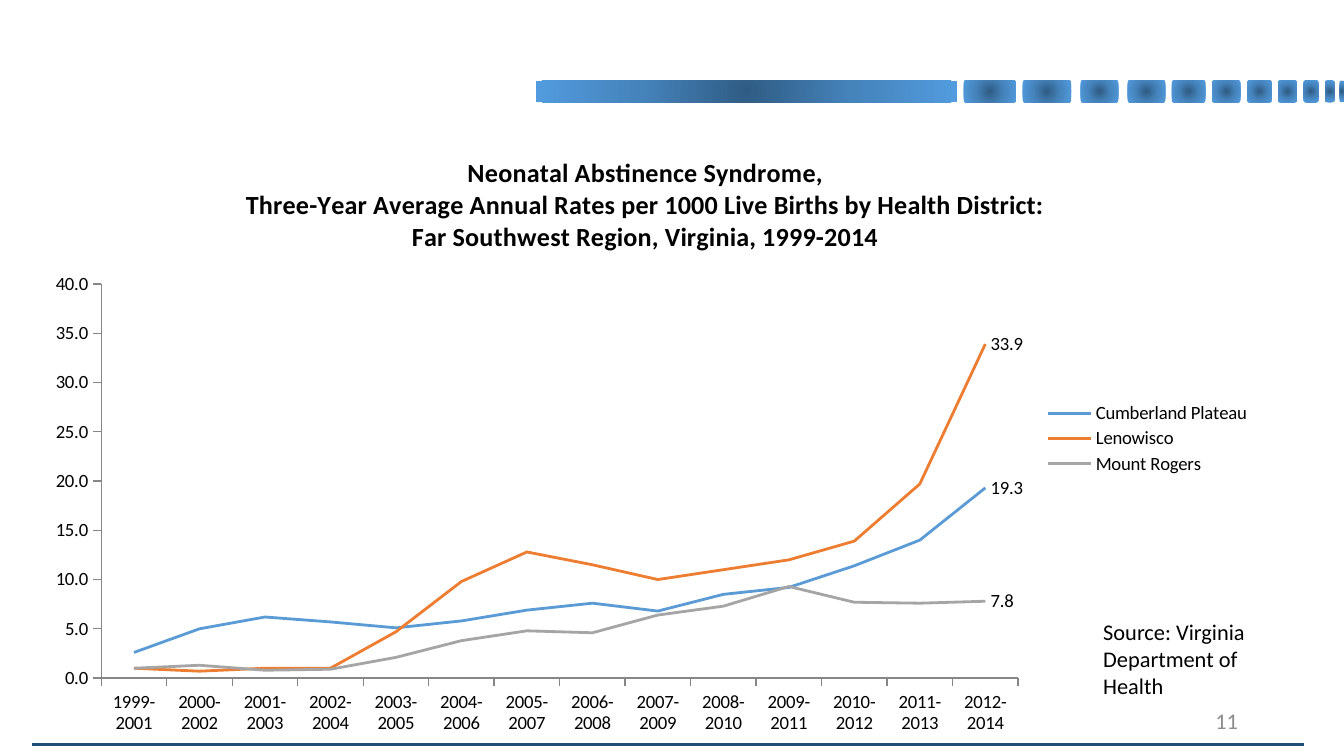
from lxml import etree
from pptx import Presentation
from pptx.chart.data import CategoryChartData
from pptx.dml.color import RGBColor
from pptx.enum.chart import XL_CHART_TYPE, XL_LABEL_POSITION, XL_LEGEND_POSITION, XL_TICK_MARK
from pptx.enum.shapes import MSO_CONNECTOR, MSO_SHAPE
from pptx.enum.text import MSO_ANCHOR, PP_ALIGN
from pptx.oxml import parse_xml
from pptx.oxml.ns import qn
from pptx.util import Pt

FONT = "Calibri"
DRAWING_NS = "http://schemas.openxmlformats.org/drawingml/2006/main"
CHART_NS = "http://schemas.openxmlformats.org/drawingml/2006/chart"


def color(value):
    return RGBColor.from_string(value)


def set_layout(parent, index, **fractions):
    """Place a chart part by fractions of the chart area; index is its slot in the parent."""
    for old in parent.findall(qn("c:layout")):
        parent.remove(old)
    inner = '<c:layoutTarget val="inner"/>' if parent.tag == qn("c:plotArea") else ""
    modes = "".join(f'<c:{key}Mode val="edge"/>' for key in fractions if key in "xy")
    values = "".join(f'<c:{key} val="{value}"/>' for key, value in fractions.items())
    parent.insert(index, parse_xml(
        f'<c:layout xmlns:c="{CHART_NS}"><c:manualLayout>{inner}{modes}{values}'
        '</c:manualLayout></c:layout>'))


prs = Presentation()
prs.slide_width, prs.slide_height = Pt(720), Pt(405)
slide = prs.slides.add_slide(prs.slide_layouts[6])

# Header band: one long bar, then ever shorter blocks (left, width)
band = [(287.3, 225.4), (516.2, 28.1), (547.9, 25.9), (578.9, 20.2), (604.1, 20.2),
        (627.8, 18), (649.4, 15.1), (668.2, 13), (684.7, 10.1), (698.4, 7.9),
        (709.9, 5), (717.8, 2.2)]
stops = "".join(f'<a:gs pos="{pos}"><a:srgbClr val="{value}"/></a:gs>' for pos, value in
                [(0, "305C84"), (50000, "4583BB"), (100000, "529BDE")])
gradient = (f'<a:gradFill xmlns:a="{DRAWING_NS}" rotWithShape="1"><a:gsLst>{stops}</a:gsLst>'
            '<a:path path="circle"><a:fillToRect l="50000" t="50000" r="50000" b="50000"/>'
            '</a:path></a:gradFill>')
for left, width in band:
    block = slide.shapes.add_shape(MSO_SHAPE.RECTANGLE, Pt(left), Pt(43.2), Pt(width), Pt(11.5))
    block.shadow.inherit = False
    block.line.fill.background()
    block.fill.solid()
    solid = block.element.spPr.find(qn("a:solidFill"))
    solid.getparent().replace(solid, parse_xml(gradient))

footer_rule = slide.shapes.add_connector(
    MSO_CONNECTOR.STRAIGHT, Pt(17.3), Pt(398.9), Pt(698.4), Pt(398.9))
footer_rule.line.color.rgb = color("1F4E79")
footer_rule.line.width = Pt(1.5)
etree.SubElement(footer_rule.element.spPr, qn("a:effectLst"))

# Rates by health district
districts = [
    ("Cumberland Plateau", "5B9BD5",
     [2.6, 5, 6.2, 5.7, 5.1, 5.8, 6.9, 7.6, 6.8, 8.5, 9.2, 11.4, 14, 19.3]),
    ("Lenowisco", "ED7D31",
     [1, 0.7, 1, 1, 4.7, 9.8, 12.8, 11.5, 10, 11, 12, 13.9, 19.7, 33.9]),
    ("Mount Rogers", "A5A5A5",
     [1, 1.3, 0.8, 0.9, 2.1, 3.8, 4.8, 4.6, 6.4, 7.3, 9.3, 7.7, 7.6, 7.8]),
]
rates = CategoryChartData(number_format="0.0")
rates.categories = [f"{year}-{year + 2}" for year in range(1999, 2013)]
for name, _, values in districts:
    rates.add_series(name, values)
chart = slide.shapes.add_chart(
    XL_CHART_TYPE.LINE, Pt(17.3), Pt(70.6), Pt(660.2), Pt(329), rates).chart
chart.font.size = Pt(10)
chart.font.name = FONT
chart.font.color.rgb = color("000000")

plot = chart.plots[0]
plot.vary_by_categories = False
for series, (_, hue, values) in zip(plot.series, districts):
    series.smooth = False
    series.format.line.color.rgb = color(hue)
    series.format.line.width = Pt(1.5)
    last_label = series.points[len(values) - 1].data_label
    last_label.position = XL_LABEL_POSITION.RIGHT
    last_label.font.size = Pt(10)
    series.data_labels.show_value = False

for axis in (chart.category_axis, chart.value_axis):
    axis.has_major_gridlines = False
    axis.major_tick_mark = XL_TICK_MARK.OUTSIDE
    axis.minor_tick_mark = XL_TICK_MARK.NONE
    axis.format.line.color.rgb = color("868686")
    axis.format.line.width = Pt(0.75)
rate_axis = chart.value_axis
rate_axis.minimum_scale, rate_axis.maximum_scale, rate_axis.major_unit = 0, 40, 5
rate_axis.tick_labels.number_format = "0.0"
rate_axis.tick_labels.number_format_is_linked = False

heading = chart.chart_title.text_frame
for number, line in enumerate([
        "Neonatal Abstinence Syndrome,",
        "Three-Year Average Annual Rates per 1000 Live Births by Health District:",
        "Far Southwest Region, Virginia, 1999-2014"]):
    paragraph = heading.add_paragraph() if number else heading.paragraphs[0]
    run = paragraph.add_run()
    run.text = line
    run.font.size, run.font.bold, run.font.name = Pt(14), True, FONT
    run.font.color.rgb = color("000000")

chart.has_legend = True
chart.legend.position = XL_LEGEND_POSITION.RIGHT
chart.legend.include_in_layout = False
chart.legend.font.size = Pt(10)

chart_root = chart.element.chart
title = chart_root.find(qn("c:title"))
title.find(qn("c:overlay")).set("val", "1")
set_layout(title, 1, x=0.17, y=0.03)
set_layout(chart_root.plotArea, 0, x=0.056, y=0.248, w=0.744, h=0.642)
set_layout(chart_root.find(qn("c:legend")), 1, x=0.82, y=0.435, w=0.17, h=0.13)

# Page number and source
for text, box, hue, align, anchor in [
        ("11", (508.3, 375.1, 162, 21.6), "8C8C8C", PP_ALIGN.RIGHT, MSO_ANCHOR.MIDDLE),
        ("Source: Virginia Department of Health", (583.9, 327.6, 113.8, 51.1), "000000",
         PP_ALIGN.LEFT, MSO_ANCHOR.TOP)]:
    frame = slide.shapes.add_textbox(*map(Pt, box)).text_frame
    frame.word_wrap = True
    frame.vertical_anchor = anchor
    frame.paragraphs[0].alignment = align
    run = frame.paragraphs[0].add_run()
    run.text = text
    run.font.size, run.font.name = Pt(12), FONT
    run.font.color.rgb = color(hue)

prs.save("out.pptx")
